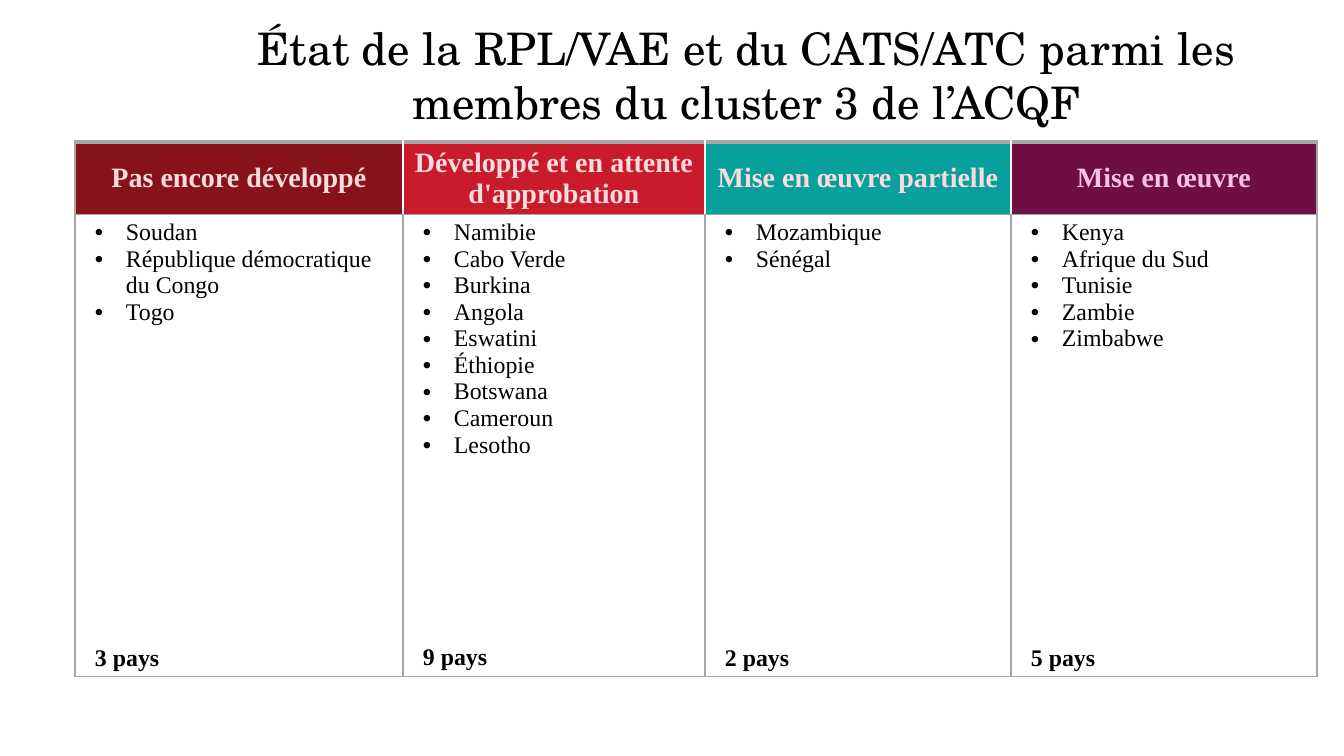
from lxml import etree
from pptx import Presentation
from pptx.dml.color import RGBColor
from pptx.enum.text import MSO_ANCHOR, PP_ALIGN
from pptx.oxml.ns import qn
from pptx.util import Emu, Pt

CENTER = PP_ALIGN.CENTER
MIDDLE = MSO_ANCHOR.MIDDLE
TOP = MSO_ANCHOR.TOP

PX = 9071  # EMU per px, at 100.8 px to the inch
TITLE_FONT = "TeX Gyre Schola"
TABLE_FONT = "Times New Roman"
BLACK = RGBColor(0x00, 0x00, 0x00)
WHITE = RGBColor(0xFF, 0xFF, 0xFF)
GRAY = RGBColor(0xA6, 0xA6, 0xA6)
PALE_ROSE = RGBColor(0xFA, 0xDB, 0xDE)
PALE_PINK = RGBColor(0xF7, 0xC2, 0xDF)
DARK_RED = RGBColor(0x87, 0x12, 0x1C)
RED = RGBColor(0xCA, 0x1B, 0x2B)
TEAL = RGBColor(0x07, 0xA0, 0x9C)
PLUM = RGBColor(0x6F, 0x0E, 0x42)

TITLE = "État de la RPL/VAE et du CATS/ATC parmi les membres du cluster 3 de l’ACQF"
# heading, fill, heading colour, width in px, countries, lines they take
COLUMNS = [
    ("Pas encore développé", DARK_RED, PALE_ROSE, 328,
     ["Soudan", "République démocratique du Congo", "Togo"], 4),
    ("Développé et en attente d'approbation", RED, PALE_ROSE, 302,
     ["Namibie", "Cabo Verde", "Burkina", "Angola", "Eswatini", "Éthiopie",
      "Botswana", "Cameroun", "Lesotho"], 9),
    ("Mise en œuvre partielle", TEAL, PALE_ROSE, 306, ["Mozambique", "Sénégal"], 2),
    ("Mise en œuvre", PLUM, PALE_PINK, 306,
     ["Kenya", "Afrique du Sud", "Tunisie", "Zambie", "Zimbabwe"], 5),
]
HEADER_HEIGHT, BODY_HEIGHT = 72, 462
LINES_ABOVE_TOTAL = 16
LINE_PITCH = 19  # points


def px(length):
    return Emu(length * PX)


def set_font(paragraph, name, size, color, bold=False):
    font = paragraph.font
    font.name, font.size, font.bold = name, Pt(size), bold
    font.color.rgb = color


def fill_cell(cell, color):
    cell.fill.solid()
    cell.fill.fore_color.rgb = color


def add_borders(cell, widths):
    """Draw gray borders; widths maps L, R, T, B (in that order) to points."""
    properties = cell._tc.get_or_add_tcPr()
    for index, (side, width) in enumerate(widths.items()):
        line = etree.Element(qn(f"a:ln{side}"), w=str(Pt(width)))
        solid = etree.SubElement(line, qn("a:solidFill"))
        etree.SubElement(solid, qn("a:srgbClr"), val=str(GRAY))
        properties.insert(index, line)


def add_bullet(paragraph):
    properties = paragraph._p.get_or_add_pPr()
    properties.set("marL", str(px(31)))
    properties.set("indent", str(px(-31)))
    etree.SubElement(properties, qn("a:buFont"), typeface="Arial")
    etree.SubElement(properties, qn("a:buChar"), char="•")


def write_header(cell, heading, fill, color, borders):
    fill_cell(cell, fill)
    add_borders(cell, borders)
    cell.vertical_anchor = MIDDLE
    paragraph = cell.text_frame.paragraphs[0]
    paragraph.text = heading
    paragraph.alignment = CENTER
    set_font(paragraph, TABLE_FONT, 20, color, bold=True)


def write_countries(cell, countries, lines):
    """List the countries, with their number at the foot of the cell."""
    fill_cell(cell, WHITE)
    add_borders(cell, dict.fromkeys("LRTB", 1))
    cell.vertical_anchor = TOP
    cell.margin_left = px(20)
    frame = cell.text_frame
    for index, country in enumerate(countries):
        paragraph = frame.add_paragraph() if index else frame.paragraphs[0]
        paragraph.text = country
        add_bullet(paragraph)
        set_font(paragraph, TABLE_FONT, 17, BLACK)
    total = frame.add_paragraph()
    total.text = f"{len(countries)} pays"
    total.space_before = Pt(LINE_PITCH * (LINES_ABOVE_TOTAL - lines))
    set_font(total, TABLE_FONT, 17, BLACK, bold=True)


def add_status_table(page):
    width = sum(column[3] for column in COLUMNS)
    table = page.shapes.add_table(
        2, len(COLUMNS), px(75), px(142), px(width), px(HEADER_HEIGHT + BODY_HEIGHT)
    ).table
    table.first_row = table.horz_banding = False
    table.rows[0].height = px(HEADER_HEIGHT)
    table.rows[1].height = px(BODY_HEIGHT)
    last = len(COLUMNS) - 1
    for index, (heading, fill, color, width, countries, lines) in enumerate(COLUMNS):
        table.columns[index].width = px(width)
        borders = {"L": 1} if index == 0 else {"R": 1} if index == last else {}
        write_header(table.cell(0, index), heading, fill, color, {**borders, "T": 3})
        write_countries(table.cell(1, index), countries, lines)


def add_title(page):
    box = page.shapes.add_textbox(px(203), px(16), px(1087), px(119))
    box.text_frame.word_wrap = True
    paragraph = box.text_frame.paragraphs[0]
    paragraph.text = TITLE
    paragraph.alignment = CENTER
    set_font(paragraph, TITLE_FONT, 32, BLACK)


def main():
    deck = Presentation()
    deck.slide_width, deck.slide_height = px(1344), px(756)
    page = deck.slides.add_slide(deck.slide_layouts[6])
    add_status_table(page)
    add_title(page)
    deck.save("out.pptx")


if __name__ == "__main__":
    main()
